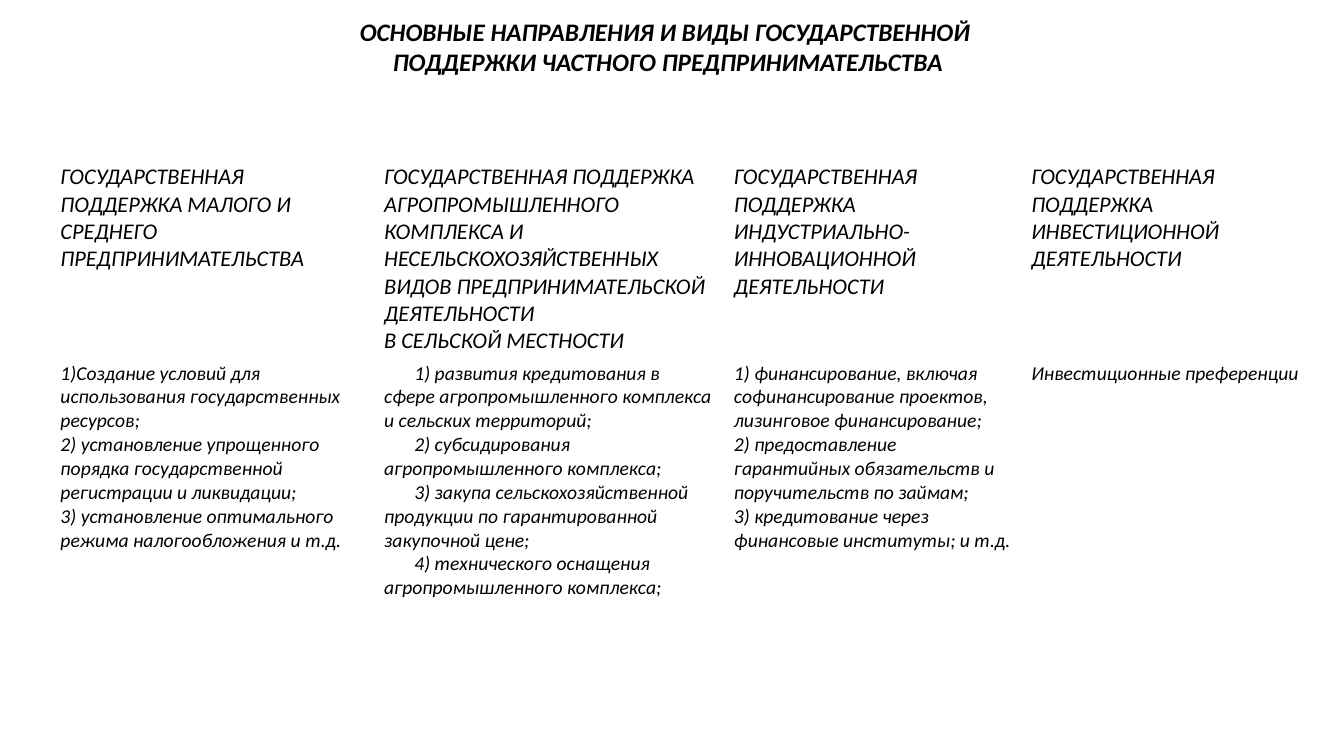
"""Build a slide on the directions of state support for private business."""
from pptx import Presentation
from pptx.dml.color import RGBColor
from pptx.enum.text import MSO_AUTO_SIZE, PP_ALIGN
from pptx.util import Inches, Pt

TITLE = "ОСНОВНЫЕ НАПРАВЛЕНИЯ И ВИДЫ ГОСУДАРСТВЕННОЙ \nПОДДЕРЖКИ ЧАСТНОГО ПРЕДПРИНИМАТЕЛЬСТВА"
SUPPORT_AREAS = [
    (3.21, 0, "ГОСУДАРСТВЕННАЯ ПОДДЕРЖКА МАЛОГО И СРЕДНЕГО ПРЕДПРИНИМАТЕЛЬСТВА", [
        "1)Создание условий для использования государственных ресурсов;",
        "2) установление упрощенного порядка государственной регистрации и ликвидации;",
        "3) установление оптимального режима налогообложения и т.д.",
    ]),
    (3.47, 0.3, "ГОСУДАРСТВЕННАЯ ПОДДЕРЖКА АГРОПРОМЫШЛЕННОГО КОМПЛЕКСА И \n"
     "НЕСЕЛЬСКОХОЗЯЙСТВЕННЫХ ВИДОВ ПРЕДПРИНИМАТЕЛЬСКОЙ ДЕЯТЕЛЬНОСТИ \n"
     "В СЕЛЬСКОЙ МЕСТНОСТИ", [
        "1) развития кредитования в сфере агропромышленного комплекса и сельских территорий;",
        "2) субсидирования агропромышленного комплекса;",
        "3) закупа сельскохозяйственной продукции по гарантированной закупочной цене;",
        "4) технического оснащения агропромышленного комплекса;",
     ]),
    (2.95, 0, "ГОСУДАРСТВЕННАЯ ПОДДЕРЖКА ИНДУСТРИАЛЬНО-ИННОВАЦИОННОЙ ДЕЯТЕЛЬНОСТИ", [
        "1) финансирование, включая софинансирование проектов, лизинговое финансирование;",
        "2) предоставление гарантийных обязательств и поручительств по займам;",
        "3) кредитование через финансовые институты; и т.д.",
    ]),
    (3.21, 0, "ГОСУДАРСТВЕННАЯ ПОДДЕРЖКА ИНВЕСТИЦИОННОЙ ДЕЯТЕЛЬНОСТИ", [
        "Инвестиционные преференции",
    ]),
]


def color(hex_value):
    return RGBColor.from_string(hex_value)


def write_paragraph(paragraph, text, size, bold=False):
    paragraph.text = text
    font = paragraph.font
    font.name = "Calibri"
    font.size = Pt(size)
    font.bold = bold
    font.italic = True
    font.color.rgb = color("000000")


presentation = Presentation()
presentation.slide_width = Inches(13.33)
presentation.slide_height = Inches(7.5)
slide = presentation.slides.add_slide(presentation.slide_layouts[6])

title_box = slide.shapes.add_textbox(Inches(3.29), Inches(0.11), Inches(6.67), Inches(0.71))
title_frame = title_box.text_frame
title_frame.word_wrap = True
title_frame.auto_size = MSO_AUTO_SIZE.SHAPE_TO_FIT_TEXT
title_paragraph = title_frame.paragraphs[0]
title_paragraph.alignment = PP_ALIGN.CENTER
write_paragraph(title_paragraph, TITLE, 18, bold=True)

table = slide.shapes.add_table(2, len(SUPPORT_AREAS), Inches(0.5), Inches(1.57),
                               Inches(12.84), Inches(0.82)).table
table.first_row = False
table.horz_banding = False

for column, (width, indent, heading, measures) in enumerate(SUPPORT_AREAS):
    table.columns[column].width = Inches(width)
    heading_cell = table.cell(0, column)
    measures_cell = table.cell(1, column)
    for cell in (heading_cell, measures_cell):
        cell.fill.background()

    write_paragraph(heading_cell.text_frame.paragraphs[0], heading, 16)

    measures_frame = measures_cell.text_frame
    for number, measure in enumerate(measures):
        paragraph = measures_frame.add_paragraph() if number else measures_frame.paragraphs[0]
        write_paragraph(paragraph, measure, 14)
        if indent:
            properties = paragraph._p.get_or_add_pPr()
            properties.set("marL", "0")
            properties.set("indent", str(Inches(indent)))

presentation.save("out.pptx")
